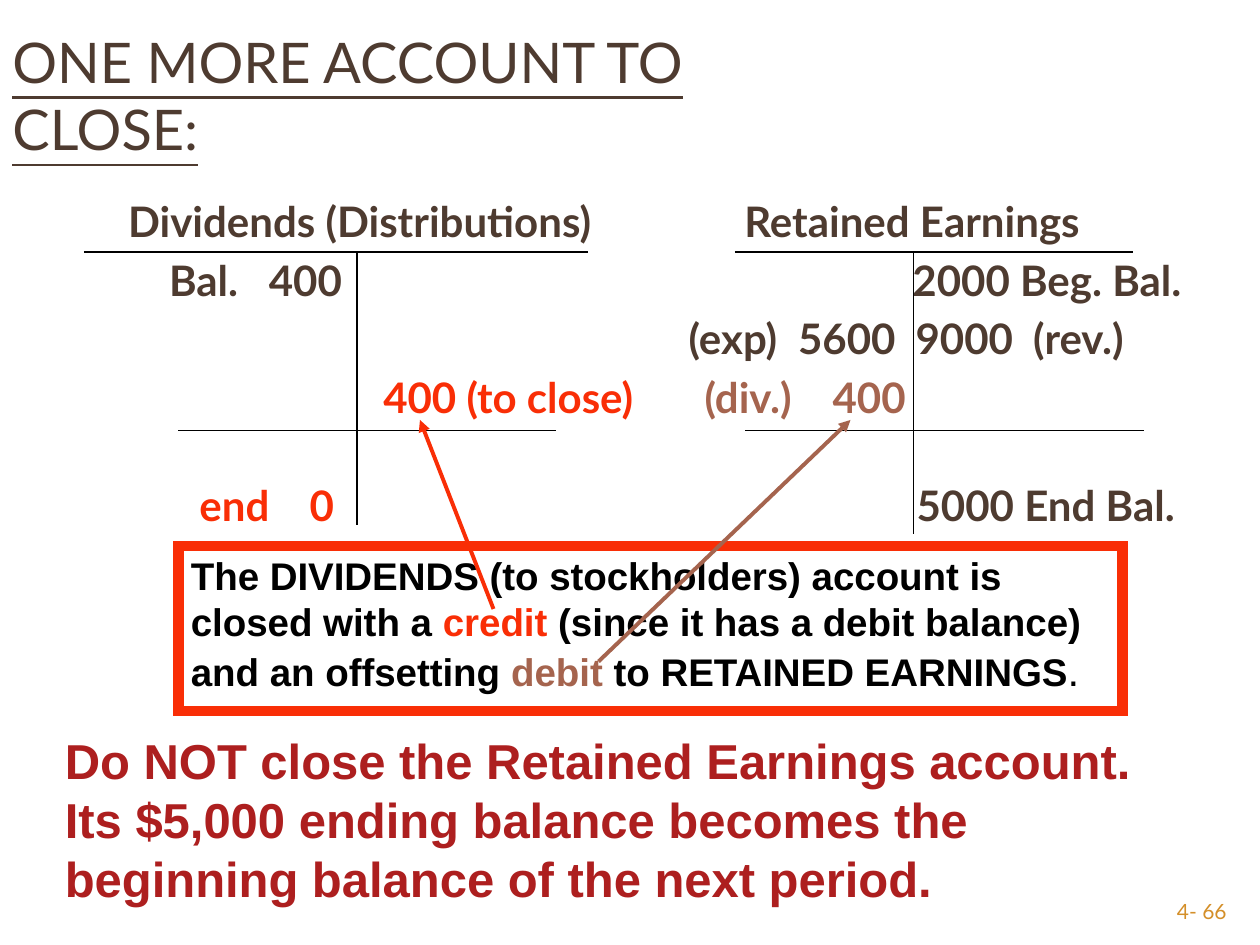
from lxml.etree import SubElement
from pptx import Presentation
from pptx.dml.color import RGBColor
from pptx.enum.shapes import MSO_CONNECTOR, MSO_SHAPE
from pptx.enum.text import MSO_ANCHOR, PP_ALIGN
from pptx.oxml.ns import qn
from pptx.util import Inches, Pt

COLUMNS, ROWS = 120, 90
SLIDE_WIDTH, SLIDE_HEIGHT = Inches(10), Inches(7.5)
LEDGER_PITCH = 5.6
BROWN, RED, CLAY, BLACK = "4E3B30", "F92E06", "A5644E", "000000"
CRIMSON, GOLD = "AD1F1F", "D48F29"


def color(hex_code):
    """Turn a hex string into a colour."""
    return RGBColor.from_string(hex_code)


def across(columns):
    """Convert grid columns to a slide length."""
    return round(SLIDE_WIDTH * columns / COLUMNS)


def down(rows):
    """Convert grid rows to a slide length."""
    return round(SLIDE_HEIGHT * rows / ROWS)


def place(box):
    """Convert a grid box to left, top, width and height."""
    left, top, width, height = box
    return across(left), down(top), across(width), down(height)


def add_run(paragraph, wording, size, hex_code, font="Lato", bold=False, underline=None):
    """Append one formatted run."""
    run = paragraph.add_run()
    run.text = wording
    run.font.name, run.font.size = font, Pt(size)
    run.font.bold, run.font.underline = bold, underline
    run.font.color.rgb = color(hex_code)


def add_text(slide, box, wording, size, hex_code, **style):
    """Add a wrapped text box with one run and return its frame."""
    frame = slide.shapes.add_textbox(*place(box)).text_frame
    frame.word_wrap = True
    add_run(frame.paragraphs[0], wording, size, hex_code, **style)
    return frame


def add_rule(slide, start, end, hex_code=BLACK, weight=1, arrow=False):
    """Draw a straight line between two grid points."""
    rule = slide.shapes.add_connector(
        MSO_CONNECTOR.STRAIGHT, across(start[0]), down(start[1]), across(end[0]), down(end[1])
    )
    rule.line.color.rgb = color(hex_code)
    rule.line.width = Pt(weight)
    if arrow:
        SubElement(rule.line._get_or_add_ln(), qn("a:tailEnd"), type="triangle")
    SubElement(rule._element.spPr, qn("a:effectLst"))


def add_heading(slide, box):
    """Place the underlined slide title."""
    frame = add_text(slide, box, "ONE MORE ACCOUNT TO CLOSE:", 32, BROWN, underline=True)
    frame.vertical_anchor = MSO_ANCHOR.BOTTOM
    frame.margin_bottom = Inches(0.05)


def add_account(slide, box, stem, total_rule, entries):
    """Draw a T-account and its entries given as column, ledger row, wording, colour."""
    left, top, width, height = box
    for column, ledger_row, wording, hex_code in entries:
        entry_top = top - 5.4 + ledger_row * LEDGER_PITCH
        entry_width = 3 + 1.8 * len(wording)
        frame = add_text(
            slide, (left + column, entry_top, entry_width, 4.8), wording, 24, hex_code, bold=True
        )
        frame.margin_left = frame.margin_right = 0
        frame.margin_top = frame.margin_bottom = 0
    add_rule(slide, (left, top), (left + width, top))
    add_rule(slide, (left + stem, top), (left + stem, top + height))
    total_start, total_end = total_rule
    add_rule(slide, (left + total_start, top + 17), (left + total_end, top + 17))


def add_explanation(slide, box):
    """Place the framed explanation of the closing entry."""
    panel = slide.shapes.add_shape(MSO_SHAPE.RECTANGLE, *place(box))
    panel.shadow.inherit = False
    panel.fill.background()
    panel.line.color.rgb = color(RED)
    panel.line.width = Pt(6)
    SubElement(panel.line._get_or_add_ln(), qn("a:miter"), lim="800000")
    frame = panel.text_frame
    frame.word_wrap = True
    frame.vertical_anchor = MSO_ANCHOR.TOP
    sentence = frame.paragraphs[0]
    sentence.alignment = PP_ALIGN.LEFT
    for wording, hex_code in (
        ("The DIVIDENDS (to stockholders) account is closed with a ", BLACK),
        ("credit", RED),
        (" (since it has a debit balance) and an offsetting ", BLACK),
        ("debit", CLAY),
        (" to RETAINED EARNINGS", BLACK),
    ):
        add_run(sentence, wording, 22, hex_code, "Arial", bold=True)
    add_run(sentence, ".", 24, BLACK, "Arial")


def add_warning(slide, box):
    """Place the closing reminder."""
    add_text(
        slide, box,
        "Do NOT close the Retained Earnings account. Its $5,000 ending balance "
        "becomes the beginning balance of the next period.",
        28, CRIMSON, font="Arial", bold=True,
    )


def add_page_number(slide, box):
    """Place the page number at the right."""
    frame = add_text(slide, box, "4- 66", 12, GOLD)
    frame.paragraphs[0].alignment = PP_ALIGN.RIGHT


def main():
    """Build and save the slide."""
    deck = Presentation()
    deck.slide_width, deck.slide_height = SLIDE_WIDTH, SLIDE_HEIGHT
    slide = deck.slides.add_slide(deck.slide_layouts[6])
    add_page_number(slide, (108, 85, 10, 3.2))
    add_heading(slide, (0, 6, 85, 10))
    add_account(slide, (8, 24, 48, 26), 26, (9, 45), (
        (4.2, 0, "Dividends (Distributions)", BROWN),
        (8.1, 1, "Bal.", BROWN),
        (17.6, 1, "400", BROWN),
        (28.5, 3, "400 (to close)", RED),
        (11, 4.84, "end", RED),
        (21.5, 4.84, "0", RED),
    ))
    add_account(slide, (70, 24, 37.9, 26.9), 17, (1, 39), (
        (0.9, 0, "Retained Earnings", BROWN),
        (16.9, 1, "2000 Beg. Bal.", BROWN),
        (-4.4, 2, "(exp)", BROWN),
        (6, 2, "5600", BROWN),
        (17.2, 2, "9000", BROWN),
        (28.4, 2, "(rev.)", BROWN),
        (-2.9, 3, "(div.)", CLAY),
        (9.3, 3, "400", CLAY),
        (17.3, 4.84, "5000 End Bal.", BROWN),
    ))
    add_explanation(slide, (17, 52, 89.9, 15.7))
    add_rule(slide, (47, 58), (40, 40), RED, 2.25, arrow=True)
    add_rule(slide, (57, 63), (81, 40), CLAY, 2.25, arrow=True)
    add_warning(slide, (5, 69, 109, 18))
    deck.save("out.pptx")


if __name__ == "__main__":
    main()
